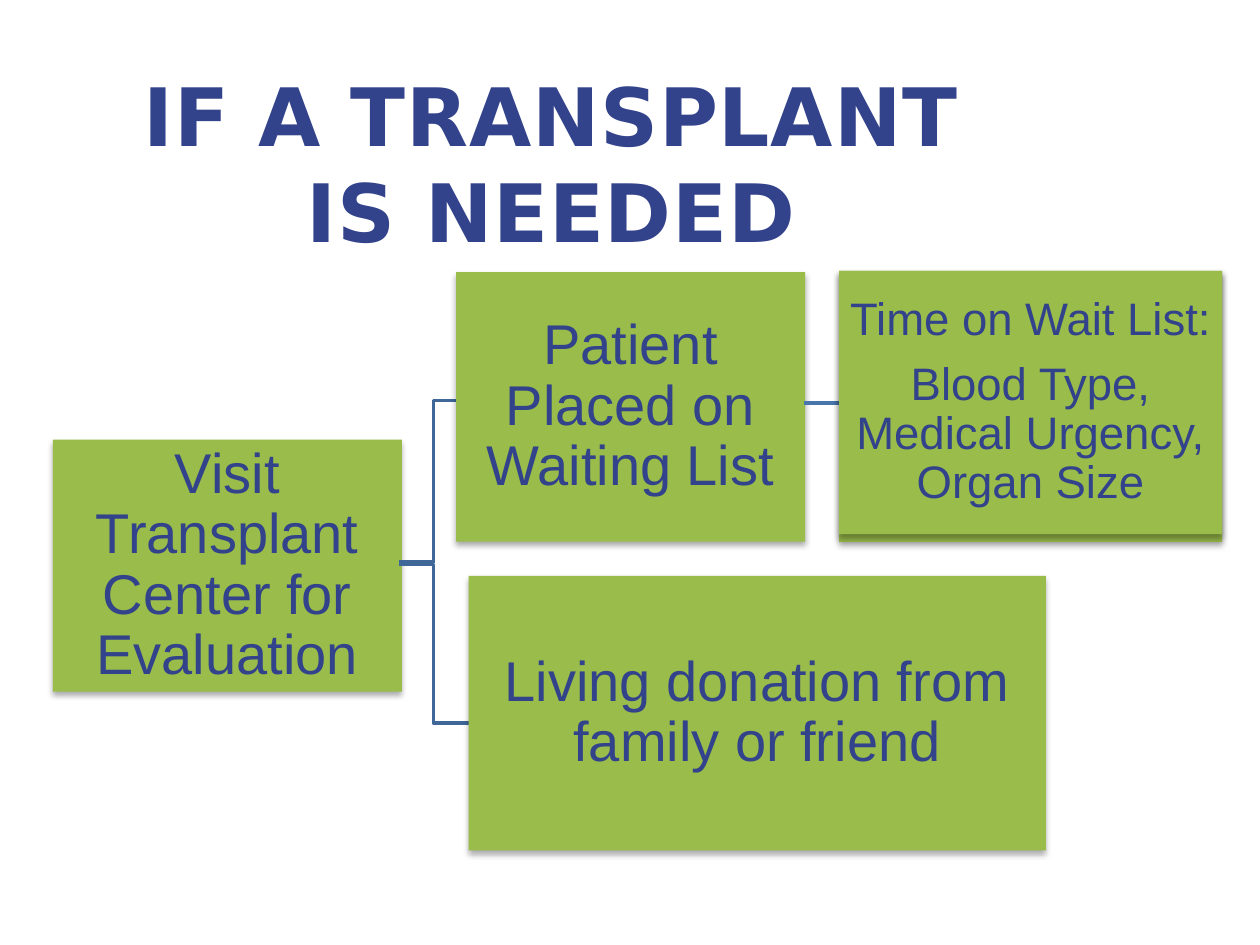
import pptx
import pptx.util
import pptx.dml.color
import pptx.enum.shapes
import pptx.enum.text
import pptx.oxml
import pptx.oxml.ns

GREEN = pptx.dml.color.RGBColor(0x9A, 0xBC, 0x4A)
NAVY = pptx.dml.color.RGBColor(0x32, 0x42, 0x8B)
ELBOW_BLUE = pptx.dml.color.RGBColor(0x3F, 0x67, 0x97)
LINK_BLUE = pptx.dml.color.RGBColor(0x48, 0x75, 0xAC)
SHADOW = (
    f'<a:effectLst {pptx.oxml.ns.nsdecls("a")}>'
    '<a:outerShdw blurRad="44450" dist="27940" dir="5400000" algn="ctr" rotWithShape="0">'
    '<a:srgbClr val="000000"><a:alpha val="32000"/></a:srgbClr>'
    '</a:outerShdw></a:effectLst>'
)

prs = pptx.Presentation()
prs.slide_width = pptx.util.Inches(10)
prs.slide_height = pptx.util.Inches(7.5)
COL = prs.slide_width / 100
ROW = prs.slide_height / 75
s = prs.slides.add_slide(prs.slide_layouts[6])


def write(tf, *lines, size, font="Arial", bold=False, spacing=0.9, margin=0.02):
    """Fill a text frame with centred navy paragraphs."""
    tf.word_wrap = True
    tf.margin_left = tf.margin_right = pptx.util.Inches(margin)
    tf.margin_top = tf.margin_bottom = pptx.util.Inches(margin)
    for i, line in enumerate(lines):
        p = tf.paragraphs[0] if i == 0 else tf.add_paragraph()
        p.alignment = pptx.enum.text.PP_ALIGN.CENTER
        p.line_spacing = spacing
        if i:
            p.space_before = pptx.util.Pt(round(size * 0.35))
        r = p.add_run()
        r.text = line
        r.font.size = pptx.util.Pt(size)
        r.font.name = font
        r.font.bold = bold
        r.font.color.rgb = NAVY


def add_box(left, top, width, height, *lines, size=32):
    """Add a green shadowed box, placed in grid columns and rows."""
    sp = s.shapes.add_shape(
        pptx.enum.shapes.MSO_SHAPE.RECTANGLE,
        round(left * COL), round(top * ROW), round(width * COL), round(height * ROW))
    sp.fill.solid()
    sp.fill.fore_color.rgb = GREEN
    sp.line.fill.background()
    sp._element.spPr.append(pptx.oxml.parse_xml(SHADOW))
    sp.text_frame.vertical_anchor = pptx.enum.text.MSO_ANCHOR.MIDDLE
    write(sp.text_frame, *lines, size=size)


# Title
title = s.shapes.add_textbox(
    round(7.5 * COL), round(4.2 * ROW), round(72.5 * COL), round(16.5 * ROW))
write(title.text_frame, "IF A TRANSPLANT IS NEEDED", size=46, font="DejaVu Sans",
      bold=True, spacing=1.0, margin=0.1)
rPr = title.text_frame.paragraphs[0].runs[0]._r.get_or_add_rPr()
rPr.set("spc", "50")
rPr.find(pptx.oxml.ns.qn("a:solidFill")).addnext(pptx.oxml.parse_xml(SHADOW))

# First step, branching to the two options
add_box(4.2, 34.9, 27.7, 20, "Visit Transplant Center for Evaluation")
for start, end in ((44.6, 31.8), (44.8, 57.4)):
    elbow = s.shapes.build_freeform(round(31.7 * COL), round(start * ROW))
    elbow.add_line_segments(
        [(round(x * COL), round(y * ROW)) for x, y in ((34.4, start), (34.4, end), (37.2, end))],
        close=False)
    sp = elbow.convert_to_shape()
    sp.shadow.inherit = False
    sp.fill.background()
    sp.line.color.rgb = ELBOW_BLUE
    sp.line.width = pptx.util.Pt(2)

# Waiting list and what decides the time on it
add_box(36.2, 21.6, 27.7, 21.4, "Patient Placed on Waiting List")
link = s.shapes.add_connector(
    pptx.enum.shapes.MSO_CONNECTOR.STRAIGHT,
    round(63.8 * COL), round(32 * ROW), round(69.4 * COL), round(32 * ROW))
link.line.color.rgb = LINK_BLUE
link.line.width = pptx.util.Pt(2)
link._element.spPr.append(pptx.oxml.parse_xml(f'<a:effectLst {pptx.oxml.ns.nsdecls("a")}/>'))
add_box(66.6, 21.5, 30.4, 21.5)
add_box(66.6, 21.5, 30.4, 20.9, "Time on Wait List:",
        "Blood Type, Medical Urgency, Organ Size", size=26)

# Living donation
add_box(37.2, 45.7, 45.8, 21.8, "Living donation from family or friend")

prs.save("out.pptx")
